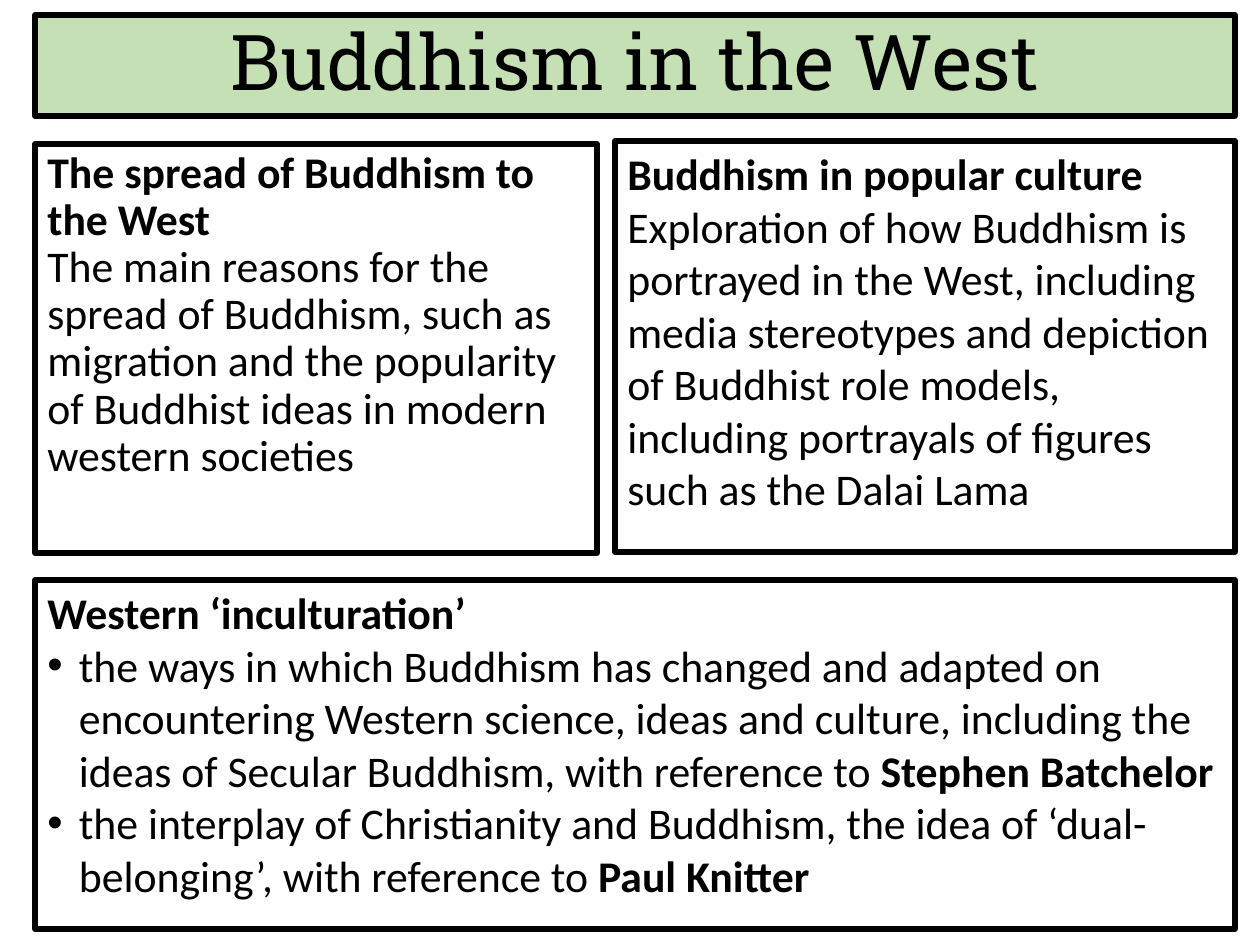
from dataclasses import dataclass

from pptx import Presentation
from pptx.dml.color import RGBColor as Color
from pptx.enum.text import MSO_ANCHOR as Anchor, MSO_AUTO_SIZE as Fit, PP_ALIGN as Align
from pptx.oxml import parse_xml
from pptx.oxml.ns import nsdecls
from pptx.util import Emu, Pt

SCALE = 914400 / 126


def px(n):
    return Emu(round(n * SCALE))


@dataclass(frozen=True)
class Theme:
    ink: Color = Color(0, 0, 0)
    green: Color = Color(0xC5, 0xE0, 0xB4)
    head: str = "Roboto Slab"
    body: str = "Calibri"
    big: Pt = Pt(44)
    text: Pt = Pt(25)
    edge: Pt = Pt(3)


def put(item, form):
    for name, value in form.items():
        setattr(item, name, value)


class Page:
    """Holds the theme and the slide being filled."""

    def __init__(self, slide, theme):
        self.slide, self.theme = slide, theme

    def frame(self, box, spot, anchor):
        """Place a box, outline it and return its text frame."""
        put(box, dict(zip(("left", "top", "width", "height"), map(px, spot))))
        put(box.line, {"width": self.theme.edge})
        box.line.color.rgb = self.theme.ink
        put(box.text_frame, {"word_wrap": True, "auto_size": Fit.NONE,
                             "vertical_anchor": anchor})
        return box.text_frame

    def run(self, para, text, font, size, bold=False):
        run = para.add_run()
        run.text = text
        put(run.font, {"name": font, "size": size, "bold": bold})
        run.font.color.rgb = self.theme.ink

    def title(self, text, spot):
        box = self.slide.shapes.title
        box.fill.solid()
        box.fill.fore_color.rgb = self.theme.green
        para = self.frame(box, spot, Anchor.MIDDLE).paragraphs[0]
        put(para, {"alignment": Align.CENTER, "line_spacing": 0.9})
        self.run(para, text, self.theme.head, self.theme.big)

    def panel(self, spot, head, items, bullet=False, **form):
        """Add a bold heading over items, each a tuple of plain and bold text."""
        box = self.slide.shapes.add_textbox(0, 0, 0, 0)
        text = self.frame(box, spot, Anchor.TOP)
        first = text.paragraphs[0]
        put(first, form)
        self.run(first, head, self.theme.body, self.theme.text, True)
        for item in items:
            para = text.add_paragraph()
            put(para, form)
            if bullet:
                self.bullet(para)
            for i, part in enumerate(item):
                self.run(para, part, self.theme.body, self.theme.text, i == 1)

    def bullet(self, para):
        props = para._p.get_or_add_pPr()
        props.set("marL", "228600")
        props.set("indent", "-228600")
        for tag in ('buFont {} typeface="Arial"', 'buChar {} char="•"'):
            props.append(parse_xml(f"<a:{tag.format(nsdecls('a'))}/>"))


def main():
    deck = Presentation()
    put(deck, {"slide_width": px(1260), "slide_height": px(945)})
    page = Page(deck.slides.add_slide(deck.slide_layouts[5]), Theme())
    left, wide = 35, 1200

    page.title("Buddhism in the West", (left, 15, wide, 101))
    page.panel(
        (left, 144, 562, 409), "The spread of Buddhism to the West",
        [("The main reasons for the spread of Buddhism, such as migration and "
          "the popularity of Buddhist ideas in modern western societies",)],
        line_spacing=0.9)
    page.panel(
        (615, 141, 620, 411), "Buddhism in popular culture",
        [("Exploration of how Buddhism is portrayed in the West, including media "
          "stereotypes and depiction of Buddhist role models, including "
          "portrayals of figures such as the Dalai Lama",)])
    page.panel(
        (left, 580, wide, 349), "Western ‘inculturation’",
        [("the ways in which Buddhism has changed and adapted on encountering "
          "Western science, ideas and culture, including the ideas of Secular "
          "Buddhism, with reference to ", "Stephen Batchelor"),
         ("the interplay of Christianity and Buddhism, the idea of "
          "‘dual-belonging’, with reference to ", "Paul Knitter")],
        bullet=True)
    deck.save("out.pptx")


if __name__ == "__main__":
    main()
